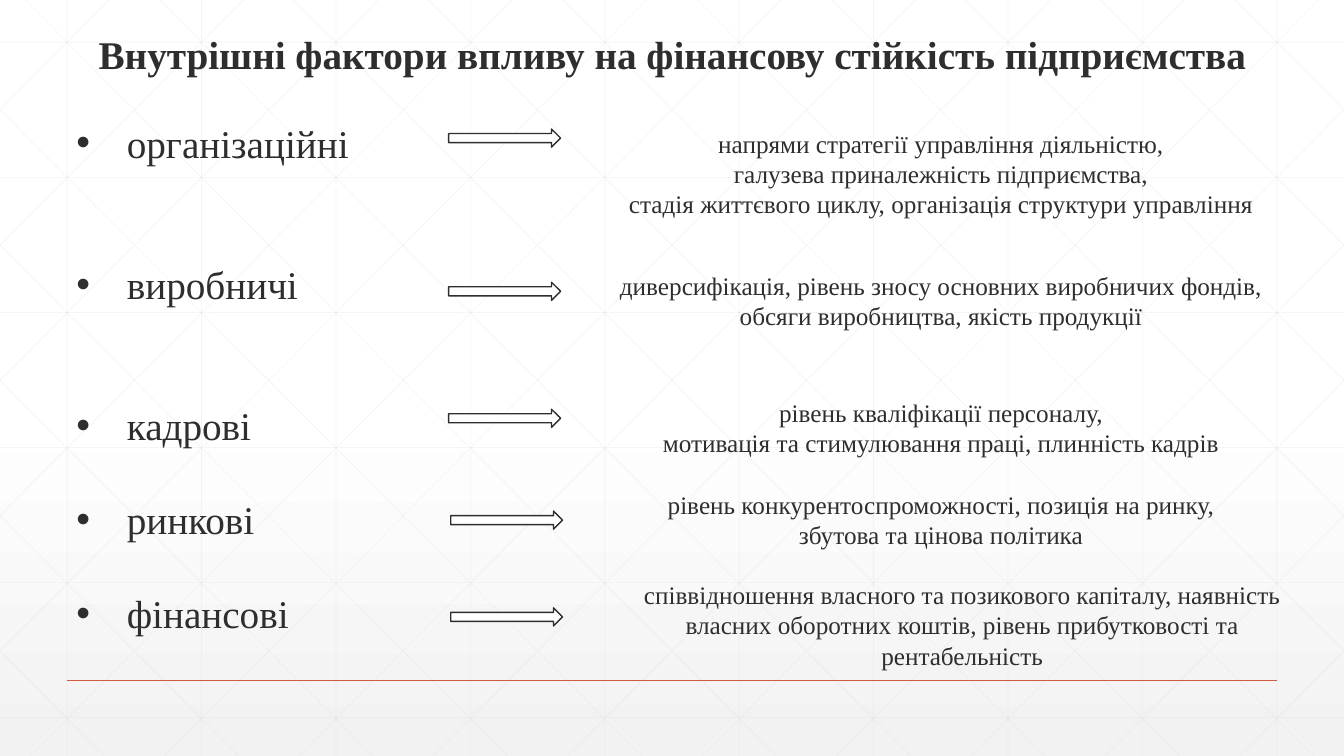
from lxml import etree
from pptx import Presentation
from pptx import util as u
from pptx.dml.color import RGBColor
from pptx.enum import shapes, text
from pptx.oxml.ns import qn

COLORS = {"ink": "2D2E2D", "white": "FFFFFF", "mist": "F2F2F2",
          "grid": "D9D9D9", "accent": "D15A3E"}
RGB = {name: RGBColor.from_string(value) for name, value in COLORS.items()}
FONT = "Times New Roman"
W, H = 13.33, 7.5
COL = W / 10
ROW = 1.34
LEADING = 1.2

prs = Presentation()
prs.slide_width, prs.slide_height = u.Inches(W), u.Inches(H)
s = prs.slides.add_slide(prs.slide_layouts[6])

bg = s.background.fill
bg.gradient()
bg.gradient_angle = 270
for stop, position, name in zip(bg.gradient_stops, (0.53, 1), ("white", "mist")):
    stop.position = position
    stop.color.rgb = RGB[name]


def add_line(x1, y1, x2, y2, color="grid", width=0.5, alpha=25):
    c = s.shapes.add_connector(shapes.MSO_CONNECTOR.STRAIGHT,
                               *(u.Inches(v) for v in (x1, y1, x2, y2)))
    c.line.color.rgb = RGB[color]
    c.line.width = u.Pt(width)
    props = c._element.spPr
    if alpha < 100:
        tint = props.find(".//" + qn("a:srgbClr"))
        etree.SubElement(tint, qn("a:alpha")).set("val", str(alpha * 1000))
    etree.SubElement(props, qn("a:effectLst"))


def add_text(box, lines, size, align=text.PP_ALIGN.LEFT, wrap=True, bold=False):
    sp = s.shapes.add_textbox(*(u.Inches(v) for v in box))
    tf = sp.text_frame
    tf.word_wrap = wrap
    tf.text = "\n".join(lines)
    for p in tf.paragraphs:
        p.alignment = align
        p.line_spacing = u.Pt(size * LEADING)
        for r in p.runs:
            r.font.name, r.font.size, r.font.bold = FONT, u.Pt(size), bold
            r.font.color.rgb = RGB["ink"]
    return tf


# Background lattice
for i in range(10):
    add_line((i + 0.5) * COL, 0, (i + 0.5) * COL, H)
for i in range(6):
    add_line(0, 0.42 + i * ROW, W, 0.42 + i * ROW)
run = 7.45
for i in range(-5, 10):
    top_x = 0.25 + i * COL
    start, end = max(0, -top_x / run), min(1, (W - top_x) / run)
    x1, x2 = top_x + start * run, top_x + end * run
    add_line(x1, start * H, x2, end * H)
    add_line(W - x1, start * H, W - x2, end * H)
add_line(COL / 2, 0.9 * H, W - COL / 2, 0.9 * H, "accent", 1, 100)

add_text((0.88, 0.25, 11.59, 0.57),
         ["Внутрішні фактори впливу на фінансову стійкість підприємства"],
         28, wrap=False, bold=True)

# Factor, list rows skipped above it, arrow left and top, details left and top, details
factors = [
    ("організаційні", 0, 4.45, 1.28, 6, 1.22,
     ["напрями стратегії управління діяльністю,",
      "галузева приналежність підприємства,",
      "стадія життєвого циклу, організація структури управління"]),
    ("виробничі", 2, 4.45, 2.8, 6, 2.63,
     ["диверсифікація, рівень зносу основних виробничих фондів, "
      "обсяги виробництва, якість продукції"]),
    ("кадрові", 2, 4.45, 4.06, 6, 3.89,
     ["рівень кваліфікації персоналу,",
      "мотивація та стимулювання праці, плинність кадрів"]),
    ("ринкові", 1, 4.47, 5.07, 6, 4.8,
     ["рівень конкурентоспроможності, позиція на ринку,",
      "збутова та цінова політика"]),
    ("фінансові", 1, 4.47, 6.03, 6.21, 5.7,
     ["співвідношення власного та позикового капіталу, наявність "
      "власних оборотних коштів, рівень прибутковості та рентабельність"]),
]

tf = add_text((0.66, 1.13, 3.36, 5.28), [f[0] for f in factors], 28)
for p, (_, skipped, *_) in zip(tf.paragraphs, factors):
    p.space_before = u.Pt(skipped * 28 * LEADING)
    pPr = p._p.get_or_add_pPr()
    pPr.set("marL", str(u.Inches(0.5)))
    pPr.set("indent", str(-u.Inches(0.5)))
    etree.SubElement(pPr, qn("a:buFont")).set("typeface", "Arial")
    etree.SubElement(pPr, qn("a:buChar")).set("char", "•")

for _, _, arrow_x, arrow_y, x, y, details in factors:
    add_text((x, y, W / 2, 0.71), details, 18, text.PP_ALIGN.CENTER)
    sp = s.shapes.add_shape(shapes.MSO_SHAPE.RIGHT_ARROW, u.Inches(arrow_x),
                            u.Inches(arrow_y), u.Inches(1.11), u.Inches(0.18))
    sp.shadow.inherit = False
    sp.fill.solid()
    sp.fill.fore_color.rgb = RGB["white"]
    sp.line.color.rgb = RGB["ink"]
    sp.line.width = u.Pt(1)

prs.save("out.pptx")
